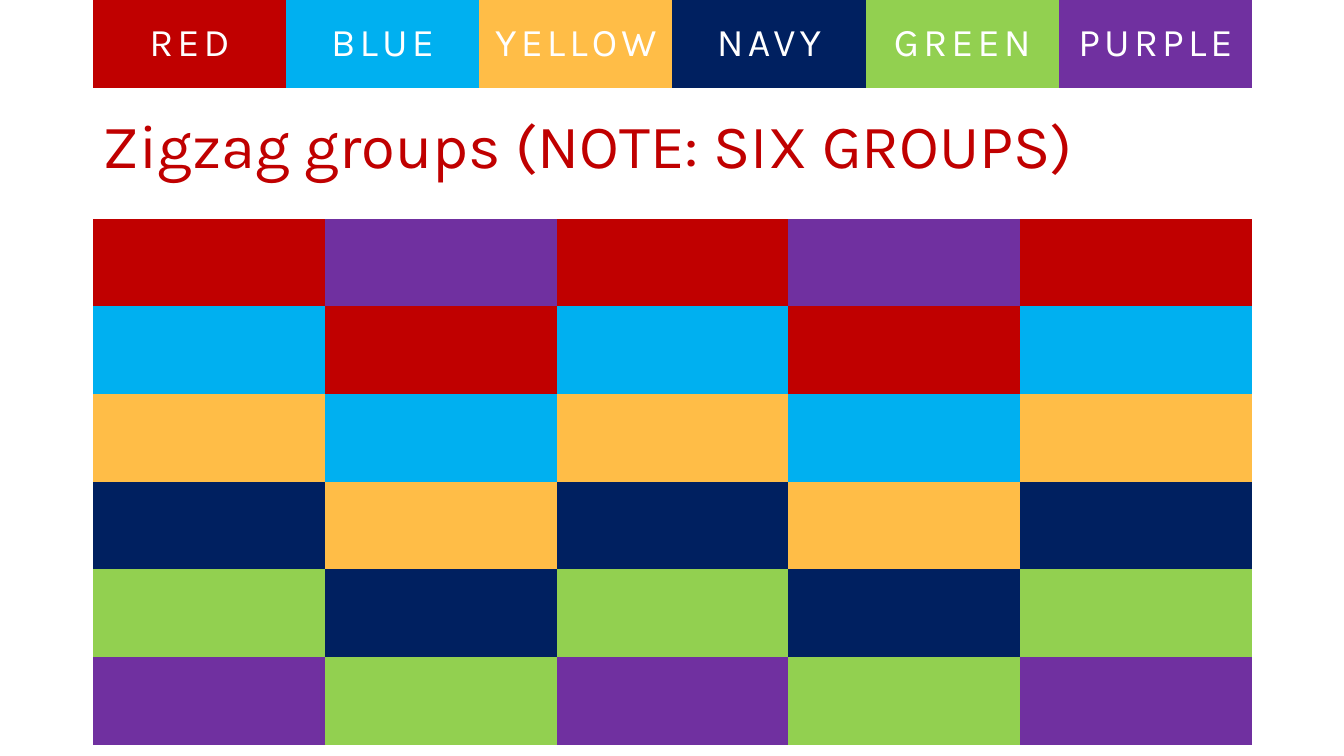
from dataclasses import dataclass

from pptx import Presentation
from pptx.dml.color import RGBColor
from pptx.enum.text import MSO_ANCHOR, PP_ALIGN
from pptx.slide import Slide
from pptx.table import Table, _Cell as Cell
from pptx.util import Inches, Pt

FONT = "Karla"
WHITE = RGBColor(0xFF, 0xFF, 0xFF)
RED = RGBColor(0xC0, 0x00, 0x00)
BLUE = RGBColor(0x00, 0xB0, 0xF0)
YELLOW = RGBColor(0xFF, 0xBD, 0x47)
NAVY = RGBColor(0x00, 0x20, 0x60)
GREEN = RGBColor(0x92, 0xD0, 0x50)
PURPLE = RGBColor(0x70, 0x30, 0xA0)

LEFT = 0.92
TABLE_WIDTH = 11.5
ROW_HEIGHT = 0.87
ZIGZAG_TOP = 2.17
ZIGZAG_COLUMNS = 5
NO_STYLE_NO_GRID = "{2D5ABB26-0587-4C30-8999-92F81FD0307C}"


@dataclass(frozen=True)
class Group:
    name: str
    color: RGBColor


GROUPS = [
    Group("RED", RED),
    Group("BLUE", BLUE),
    Group("YELLOW", YELLOW),
    Group("NAVY", NAVY),
    Group("GREEN", GREEN),
    Group("PURPLE", PURPLE),
]


def add_title(slide: Slide, text: str) -> None:
    title = slide.shapes.title
    title.left, title.top = Inches(LEFT), Inches(0.4)
    title.width, title.height = Inches(12.42), Inches(1.45)
    frame = title.text_frame
    frame.text = text
    frame.word_wrap = True
    frame.vertical_anchor = MSO_ANCHOR.BOTTOM
    paragraph = frame.paragraphs[0]
    paragraph.alignment = PP_ALIGN.LEFT
    paragraph.line_spacing = 0.9
    paragraph.font.name = FONT
    paragraph.font.size = Pt(44)
    paragraph.font.color.rgb = RED


def add_plain_table(slide: Slide, rows: int, columns: int, top: float) -> Table:
    """Add a table without borders or banding, with equal columns."""
    table = slide.shapes.add_table(
        rows, columns, Inches(LEFT), Inches(top),
        Inches(TABLE_WIDTH), Inches(rows * ROW_HEIGHT),
    ).table
    table.first_row = False
    table.horz_banding = False
    table._tbl.tblPr.find("{*}tableStyleId").text = NO_STYLE_NO_GRID
    return table


def fill_cell(cell: Cell, color: RGBColor) -> None:
    cell.fill.solid()
    cell.fill.fore_color.rgb = color


def label_cell(cell: Cell, text: str) -> None:
    cell.text = text
    cell.vertical_anchor = MSO_ANCHOR.MIDDLE
    paragraph = cell.text_frame.paragraphs[0]
    paragraph.alignment = PP_ALIGN.CENTER
    paragraph.font.name = FONT
    paragraph.font.size = Pt(28)
    paragraph.font.color.rgb = WHITE
    paragraph.runs[0].font._element.set("spc", "300")


def add_zigzag_table(slide: Slide) -> None:
    """Shift the group colours down by one row in every second column."""
    table = add_plain_table(slide, len(GROUPS), ZIGZAG_COLUMNS, ZIGZAG_TOP)
    for row in range(len(GROUPS)):
        for column in range(ZIGZAG_COLUMNS):
            group = GROUPS[(row - column % 2) % len(GROUPS)]
            fill_cell(table.cell(row, column), group.color)


def add_group_header(slide: Slide) -> None:
    table = add_plain_table(slide, 1, len(GROUPS), 0)
    for column, group in enumerate(GROUPS):
        cell = table.cell(0, column)
        fill_cell(cell, group.color)
        label_cell(cell, group.name)


def main() -> None:
    presentation = Presentation()
    presentation.slide_width = Inches(13.33)
    presentation.slide_height = Inches(7.5)
    slide = presentation.slides.add_slide(presentation.slide_layouts[5])
    add_title(slide, "Zigzag groups (NOTE: SIX GROUPS)")
    add_zigzag_table(slide)
    add_group_header(slide)
    presentation.save("out.pptx")


if __name__ == "__main__":
    main()
